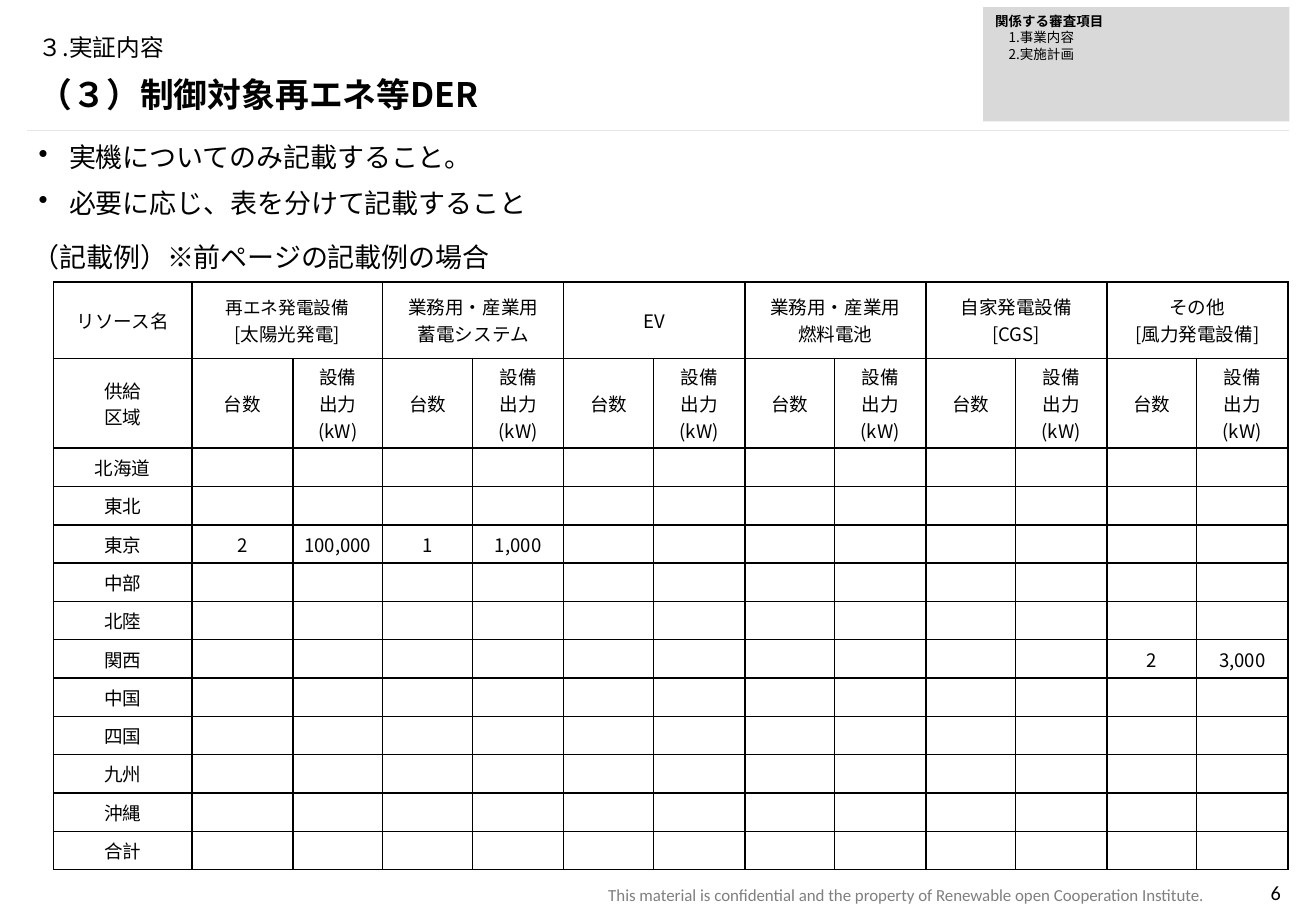
from lxml import etree
from pptx import Presentation
from pptx.dml.color import RGBColor
from pptx.enum import shapes, text
from pptx.oxml import ns
from pptx.util import Inches, Pt

BLACK = RGBColor(0x00, 0x00, 0x00)
GRAY = RGBColor(0x7F, 0x7F, 0x7F)
PALE = RGBColor(0xD9, 0xD9, 0xD9)
RULE = RGBColor(0xE7, 0xE6, 0xE6)
SANS, LATIN = "Noto Sans CJK JP", "Calibri"
LEFT, MID, RIGHT = text.PP_ALIGN.LEFT, text.PP_ALIGN.CENTER, text.PP_ALIGN.RIGHT

GROUPS = [
    ["再エネ発電設備", "[太陽光発電]"],
    ["業務用・産業用", "蓄電システム"],
    ["EV"],
    ["業務用・産業用", "燃料電池"],
    ["自家発電設備", "[CGS]"],
    ["その他", "[風力発電設備]"],
]
AREAS = ["北海道", "東北", "東京", "中部", "北陸", "関西",
         "中国", "四国", "九州", "沖縄", "合計"]
VALUES = {("東京", 1): "2", ("東京", 2): "100,000", ("東京", 3): "1",
          ("東京", 4): "1,000", ("関西", 11): "2", ("関西", 12): "3,000"}


def write(frame, lines, size, align=LEFT, face=SANS, color=BLACK, bold=False):
    """Fill a text frame with one paragraph per line in one style."""
    frame.word_wrap = True
    for i, line in enumerate(lines):
        para = frame.paragraphs[0] if i == 0 else frame.add_paragraph()
        para.text = line
        para.alignment = align
        font = para.font
        font.size, font.name, font.bold = Pt(size), face, bold
        font.color.rgb = color
        base = para._p.pPr.find(ns.qn("a:defRPr"))
        etree.SubElement(base, ns.qn("a:ea"), typeface=face)
        if not line:
            etree.SubElement(para._p, ns.qn("a:endParaRPr"), sz=str(int(size * 100)))
    return frame.paragraphs


def label(slide, box, lines, size, **style):
    """Add a text box and return its frame."""
    frame = slide.shapes.add_textbox(*map(Inches, box)).text_frame
    write(frame, lines, size, **style)
    return frame


def header(slide, box):
    """Place the section title, the subtitle and the rule below them."""
    x, y, w, h = box
    title = slide.shapes.title
    title.left, title.top, title.width, title.height = map(Inches, (x, y, w, 0.39))
    frame = title.text_frame
    frame.auto_size = text.MSO_AUTO_SIZE.NONE
    frame.vertical_anchor = text.MSO_ANCHOR.MIDDLE
    write(frame, ["３.実証内容"], 14)[0].line_spacing = 0.9
    sub = label(slide, (x, y + 0.39, w, 0.39), ["（３）制御対象再エネ等DER"], 20, bold=True)
    sub.vertical_anchor = text.MSO_ANCHOR.BOTTOM
    sub.paragraphs[0].line_spacing = 0.8
    rule = slide.shapes.add_connector(
        shapes.MSO_CONNECTOR.STRAIGHT, *map(Inches, (x, y + h, x + w, y + h)))
    rule.line.color.rgb, rule.line.width = RULE, Pt(0.25)
    etree.SubElement(rule._element.spPr, ns.qn("a:effectLst"))


def review(slide, box):
    """Place the gray panel of review items."""
    panel = slide.shapes.add_shape(shapes.MSO_SHAPE.RECTANGLE, *map(Inches, box))
    panel.shadow.inherit = False
    panel.fill.solid()
    panel.fill.fore_color.rgb = PALE
    panel.line.fill.background()
    frame = panel.text_frame
    frame.vertical_anchor = text.MSO_ANCHOR.TOP
    lines = write(frame, ["関係する審査項目", "　1.事業内容", "　2.実施計画"], 8)
    lines[0].font.bold = True


def notes(slide, box):
    """Place the bulleted instructions and the caption of the table."""
    x, y, w, h = box
    frame = label(slide, (x, y, w, h),
                  ["実機についてのみ記載すること。", "必要に応じ、表を分けて記載すること"], 16)
    for para in frame.paragraphs:
        para.line_spacing, para.space_before = 0.9, Pt(10)
        props = para._p.pPr
        props.set("marL", str(Inches(0.25)))
        props.set("indent", str(-Inches(0.25)))
        bullet = etree.Element(ns.qn("a:buChar"), char="•")
        props.find(ns.qn("a:defRPr")).addprevious(bullet)
    label(slide, (x - 0.05, y + 0.79, 5.46, 0.37), ["（記載例）※前ページの記載例の場合"], 16)


def border(cell):
    """Draw a black line on each side of a cell."""
    props = cell._tc.get_or_add_tcPr()
    for side in ("lnL", "lnR", "lnT", "lnB"):
        line = etree.SubElement(props, ns.qn("a:" + side), w=str(Pt(1)))
        fill = etree.SubElement(line, ns.qn("a:solidFill"))
        etree.SubElement(fill, ns.qn("a:srgbClr"), val=str(BLACK))


def lines(row, col):
    """Return the lines of text of one table cell."""
    if row == 0:
        return ["リソース名"] if col == 0 else GROUPS[col // 2] if col % 2 else [""]
    if row == 1:
        return ["供給", "区域"] if col == 0 else ["台数"] if col % 2 else ["設備\n出力\n(kW)"]
    area = AREAS[row - 2]
    return [VALUES.get((area, col), "") if col else area]


def grid(slide, box):
    """Place the table of resources by supply area."""
    wide = [1.14, 0.83, 0.74] + [0.74, 0.75] * 5
    tall = [0.63, 0.74] + [(box[3] - 1.37) / len(AREAS)] * len(AREAS)
    table = slide.shapes.add_table(len(tall), len(wide), *map(Inches, box)).table
    table.first_row = table.horz_banding = False
    for col, size in zip(table.columns, wide):
        col.width = Inches(size)
    for row, size in zip(table.rows, tall):
        row.height = Inches(size)
    for r in range(len(tall)):
        for c in range(len(wide)):
            cell = table.cell(r, c)
            border(cell)
            cell.fill.background()
            cell.margin_left = cell.margin_right = 0
            cell.margin_top = cell.margin_bottom = 0
            cell.vertical_anchor = text.MSO_ANCHOR.MIDDLE
            write(cell.text_frame, lines(r, c), 11, MID)
    for c in range(1, len(wide), 2):
        table.cell(0, c).merge(table.cell(0, c + 1))
    table.cell(0, 1).text_frame.paragraphs[0].font.size = Pt(10.5)


def footer(slide, box):
    """Place the confidentiality line and the page number."""
    x, y, w, h = box
    label(slide, (x, y + 0.03, 6.28, 0.27),
          ["This material is confidential and the property of "
           "Renewable open Cooperation Institute."],
          10, align=RIGHT, face=LATIN, color=GRAY)
    page = label(slide, (x + w - 0.79, y, 0.79, h), ["6"], 12, align=RIGHT, face=LATIN)
    page.margin_left = page.margin_right = 0


def main():
    """Build the slide and save it."""
    deck = Presentation()
    deck.slide_width, deck.slide_height = Inches(10.83), Inches(7.5)
    slide = deck.slides.add_slide(deck.slide_layouts[5])
    header(slide, (0.22, 0.21, 10.39, 0.86))
    review(slide, (8.09, 0.06, 2.52, 0.94))
    notes(slide, (0.22, 1.14, 10.4, 1.67))
    grid(slide, (0.44, 2.32, 10.14, 4.84))
    footer(slide, (3.72, 7.2, 6.82, 0.3))
    deck.save("out.pptx")


if __name__ == "__main__":
    main()
